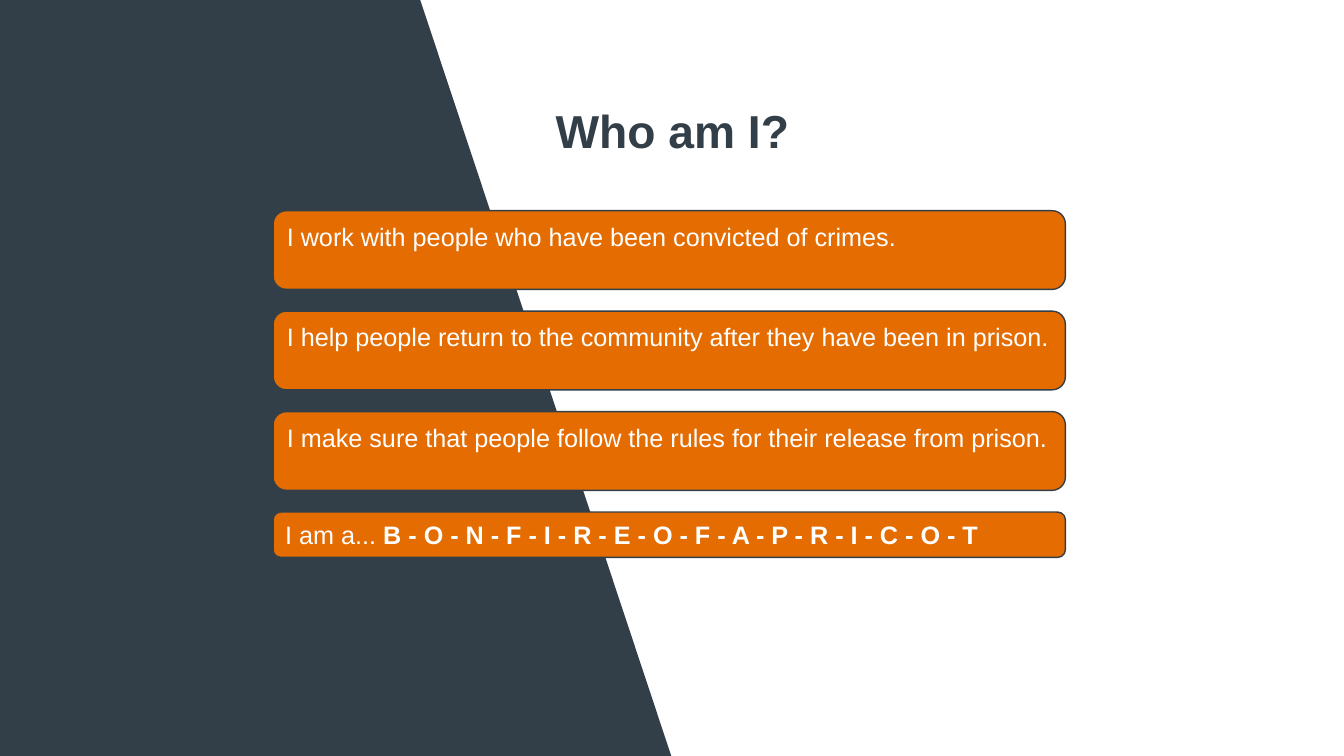
from dataclasses import dataclass

from pptx import Presentation
from pptx.dml.color import RGBColor
from pptx.enum.shapes import MSO_SHAPE
from pptx.enum.text import MSO_ANCHOR, PP_ALIGN
from pptx.slide import Slide
from pptx.text.text import TextFrame
from pptx.util import Pt


@dataclass(frozen=True)
class Theme:
    font: str = "Arial"
    slate: RGBColor = RGBColor(0x33, 0x3F, 0x48)
    orange: RGBColor = RGBColor(0xE4, 0x6C, 0x00)
    white: RGBColor = RGBColor(0xFF, 0xFF, 0xFF)
    title_size: float = 33
    clue_size: float = 18


@dataclass(frozen=True)
class Clue:
    text: str
    answer: str = ""
    height: float = 56.2
    anchor: MSO_ANCHOR = MSO_ANCHOR.TOP


THEME = Theme()
SLIDE_WIDTH, SLIDE_HEIGHT = 960, 540
CLUE_LEFT, CLUE_TOP, CLUE_WIDTH, CLUE_PITCH = 195.1, 150.5, 565.9, 71.75

CLUES = [
    Clue("I work with people who have been convicted of crimes."),
    Clue("I help people return to the community after they have been in prison."),
    Clue("I make sure that people follow the rules for their release from prison."),
    Clue(
        "I am a... ",
        "B - O - N - F - I - R - E - O - F - A - P - R - I - C - O - T",
        height=32.4,
        anchor=MSO_ANCHOR.MIDDLE,
    ),
]


def style_text(frame: TextFrame, size: float, color: RGBColor, alignment: PP_ALIGN) -> None:
    frame.word_wrap = True
    paragraph = frame.paragraphs[0]
    paragraph.alignment = alignment
    paragraph.font.name = THEME.font
    paragraph.font.size = Pt(size)
    paragraph.font.color.rgb = color


def draw_panel(slide: Slide) -> None:
    builder = slide.shapes.build_freeform(Pt(0), Pt(0))
    corners = [(300.2, 0), (479.5, SLIDE_HEIGHT), (0, SLIDE_HEIGHT)]
    builder.add_line_segments([(Pt(x), Pt(y)) for x, y in corners])
    shape = builder.convert_to_shape()
    shape.shadow.inherit = False
    shape.fill.solid()
    shape.fill.fore_color.rgb = THEME.slate
    shape.line.fill.background()


def draw_clue(slide: Slide, clue: Clue, top: float) -> None:
    shape = slide.shapes.add_shape(
        MSO_SHAPE.ROUNDED_RECTANGLE,
        Pt(CLUE_LEFT), Pt(top), Pt(CLUE_WIDTH), Pt(clue.height),
    )
    shape.shadow.inherit = False
    shape.fill.solid()
    shape.fill.fore_color.rgb = THEME.orange
    shape.line.color.rgb = THEME.slate
    shape.line.width = Pt(1)

    frame = shape.text_frame
    frame.vertical_anchor = clue.anchor
    frame.margin_top = frame.margin_bottom = Pt(4.6)
    frame.margin_right = Pt(0)
    paragraph = frame.paragraphs[0]
    paragraph.add_run().text = clue.text
    if clue.answer:
        answer = paragraph.add_run()
        answer.text = clue.answer
        answer.font.bold = True
    style_text(frame, THEME.clue_size, THEME.white, PP_ALIGN.LEFT)


def draw_title(slide: Slide, text: str) -> None:
    frame = slide.shapes.add_textbox(Pt(293.8), Pt(69.1), Pt(373), Pt(47.5)).text_frame
    frame.text = text
    frame.vertical_anchor = MSO_ANCHOR.MIDDLE
    style_text(frame, THEME.title_size, THEME.slate, PP_ALIGN.CENTER)
    frame.paragraphs[0].font.bold = True


def main() -> None:
    presentation = Presentation()
    presentation.slide_width = Pt(SLIDE_WIDTH)
    presentation.slide_height = Pt(SLIDE_HEIGHT)
    slide = presentation.slides.add_slide(presentation.slide_layouts[6])

    # Slanted background panel
    draw_panel(slide)

    # Clues, evenly spaced down the slide
    for index, clue in enumerate(CLUES):
        draw_clue(slide, clue, CLUE_TOP + index * CLUE_PITCH)

    # Heading
    draw_title(slide, "Who am I?")

    presentation.save("out.pptx")


if __name__ == "__main__":
    main()
